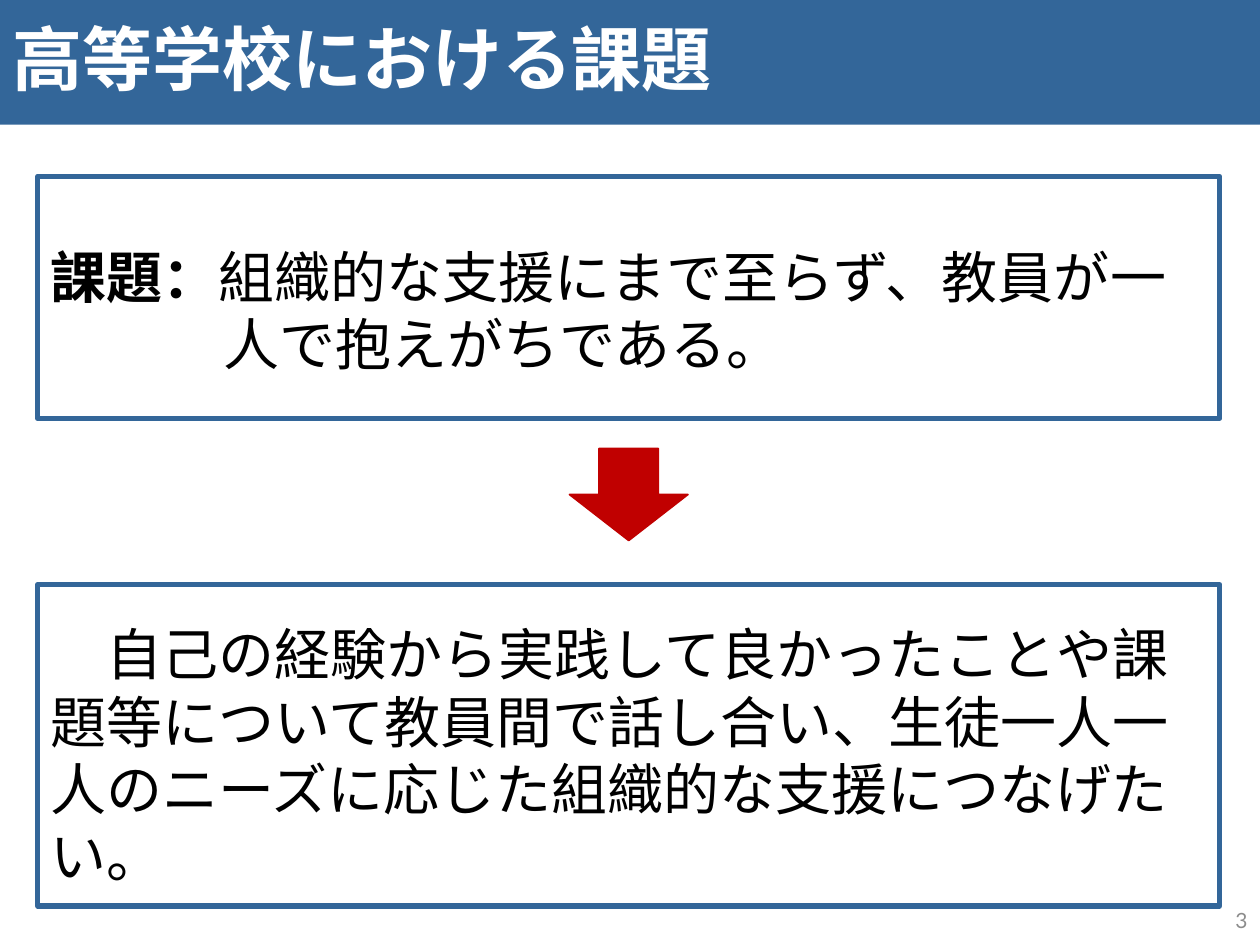
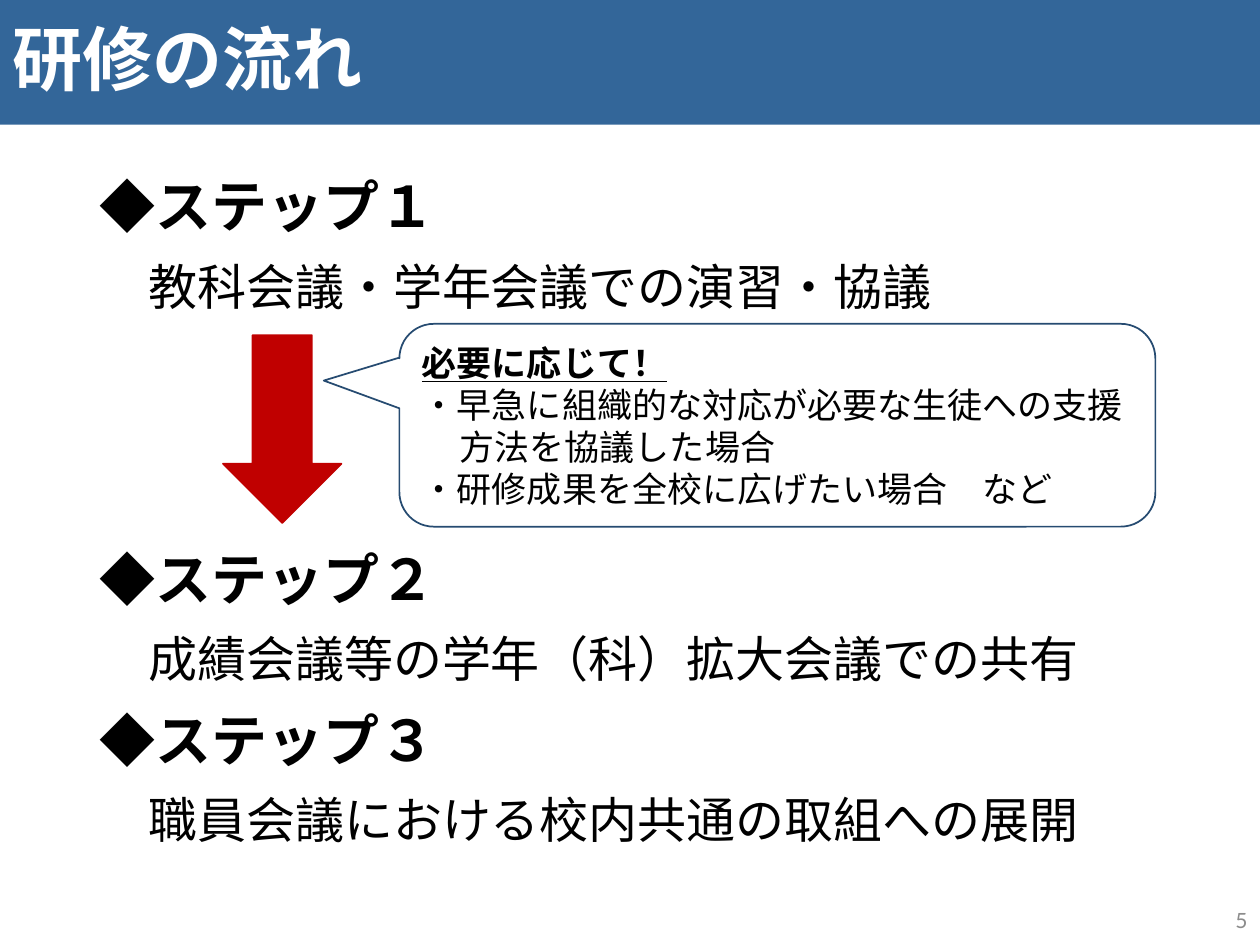
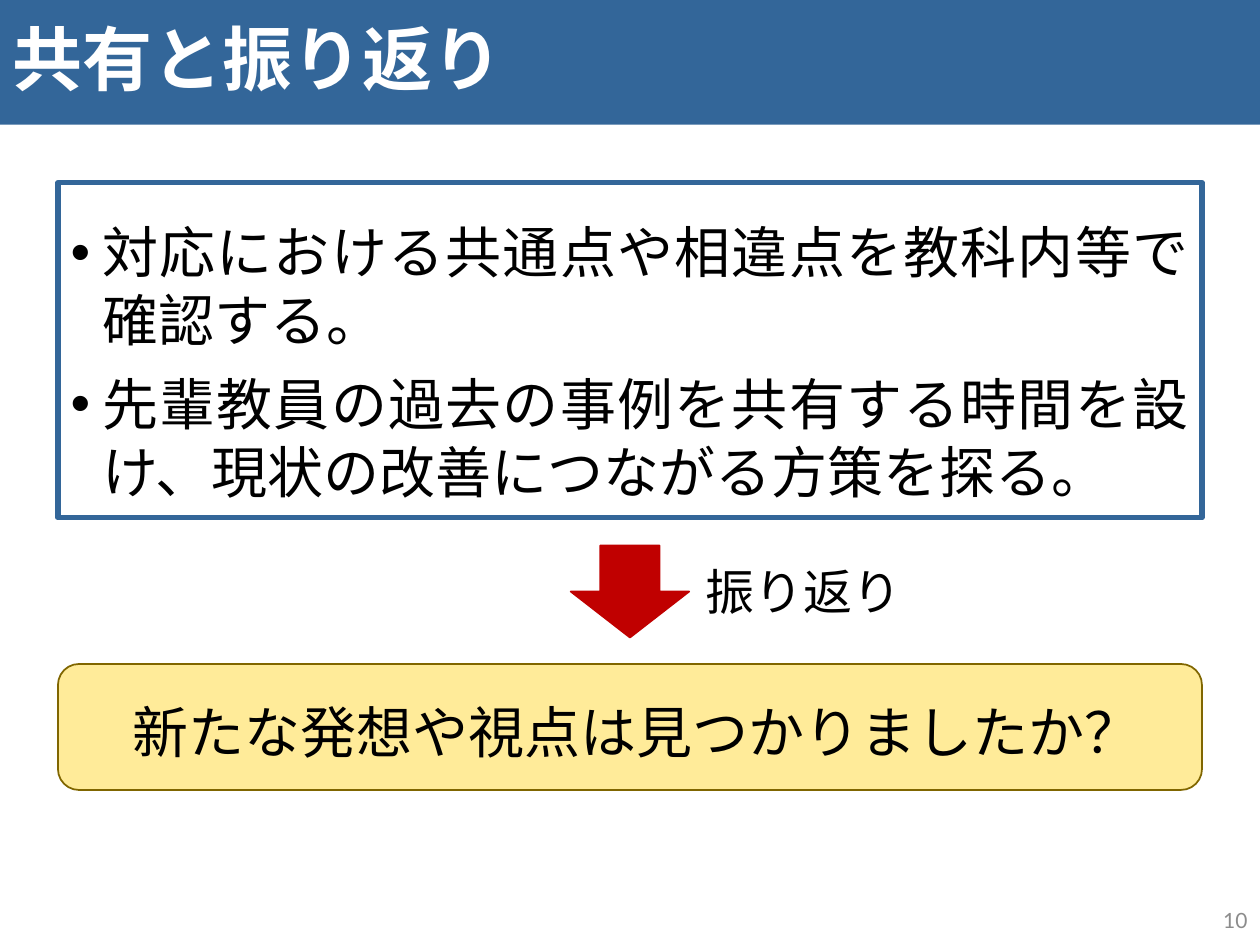
from lxml.etree import SubElement
from pptx import Presentation
from pptx.dml.color import RGBColor
from pptx.enum.shapes import MSO_SHAPE
from pptx.enum.text import MSO_ANCHOR, MSO_AUTO_SIZE, PP_ALIGN
from pptx.oxml.ns import qn
from pptx.util import Inches, Pt

# Shared look
BLUE, NAVY, RED = "336699", "264B71", "C00000"
CREAM, OLIVE = "FFEB99", "806600"
WHITE, BLACK, GREY = "FFFFFF", "000000", "8C8C8C"
LATO, NOTO = "Lato", "Noto Sans CJK JP"
TOP_GAP = 0.28

deck = Presentation()
deck.slide_width, deck.slide_height = Inches(10), Inches(7.5)
# The slide is a grid of 100 columns and 75 rows
COLUMN, ROW = deck.slide_width / 100, deck.slide_height / 75


def dress(shape, left, top, columns, rows, fill=None, line=None, weight=1,
          anchor=MSO_ANCHOR.TOP, inset=0.05):
    """Place a shape on the grid, paint it and prepare its text frame."""
    shape.left, shape.width = round(left * COLUMN), round(columns * COLUMN)
    shape.top, shape.height = round(top * ROW), round(rows * ROW)
    shape.shadow.inherit = False
    if fill:
        shape.fill.solid()
        shape.fill.fore_color.rgb = RGBColor.from_string(fill)
    if line:
        shape.line.color.rgb = RGBColor.from_string(line)
        shape.line.width = Pt(weight)
    frame = shape.text_frame
    frame.word_wrap = True
    frame.auto_size = MSO_AUTO_SIZE.NONE
    frame.vertical_anchor = anchor
    frame.margin_top = Inches(inset)
    return shape


def write(shape, text, size, font=LATO, color=BLACK, bold=False, before=0,
          spacing=1.0, align=PP_ALIGN.LEFT, hanging=0, bullet=None):
    """Add one paragraph and return it."""
    frame = shape.text_frame
    paragraph = frame.add_paragraph() if frame.text else frame.paragraphs[0]
    properties = paragraph._p.get_or_add_pPr()
    properties.set("marL", str(Inches(hanging)))
    properties.set("indent", str(-Inches(hanging)))
    if bullet:
        SubElement(properties, qn("a:buChar")).set("char", bullet)
    else:
        SubElement(properties, qn("a:buNone"))
    paragraph.add_run().text = text
    paragraph.alignment = align
    paragraph.space_before = Pt(before)
    paragraph.line_spacing = spacing
    paragraph.font.size = Pt(size)
    paragraph.font.name = font
    paragraph.font.bold = bold
    paragraph.font.color.rgb = RGBColor.from_string(color)
    return paragraph


# Title band, page number and red arrow of every slide
pages = [
    ("高等学校における課題", "3", (45.2, 35.6, 9.4, 7.3)),
    ("研修の流れ", "5", (17.7, 26.6, 9.4, 14.9)),
    ("共有と振り返り", "10", (45.3, 43.3, 9.4, 7.3)),
]
slides = []
for heading, number, arrow_cells in pages:
    slide = deck.slides.add_slide(deck.slide_layouts[1])
    band = dress(slide.shapes.title, 0, 0, 100, 9.9, BLUE, anchor=MSO_ANCHOR.MIDDLE)
    write(band, heading, 40, color=WHITE, bold=True, spacing=0.9)
    page_number = dress(slide.shapes.add_textbox(0, 0, 0, 0), 77.5, 71, 22.5, 4,
                        anchor=MSO_ANCHOR.MIDDLE)
    write(page_number, number, 12, color=GREY, align=PP_ALIGN.RIGHT)
    dress(slide.shapes.add_shape(MSO_SHAPE.DOWN_ARROW, 0, 0, 0, 0),
          *arrow_cells, RED, RED)
    slides.append(slide)
issue_slide, flow_slide, review_slide = slides

# Slide 1: issue and the aim that follows from it
issue = dress(issue_slide.placeholders[1], 3, 14, 93.8, 19.2, WHITE, BLUE, 3,
              MSO_ANCHOR.MIDDLE, 0.24)
issue_text = write(issue, "課題：", 32, NOTO, before=10, hanging=1.37)
issue_text.runs[0].font.bold = True
issue_text.add_run().text = "組織的な支援にまで至らず、教員が一人で抱えがちである。"

aim = dress(issue_slide.shapes.add_shape(MSO_SHAPE.RECTANGLE, 0, 0, 0, 0),
            3, 46.4, 93.8, 25.5, WHITE, BLUE, 3, inset=TOP_GAP)
write(aim, "　自己の経験から実践して良かったことや課題等について教員間で話し合い、"
           "生徒一人一人のニーズに応じた組織的な支援につなげたい。", 32, NOTO, before=10)

# Slide 2: three steps, with room for the arrow before the second
steps = dress(flow_slide.placeholders[1], 6.9, 13.1, 87.4, 59.1)
for step, meeting, gap in [
    ("◆ステップ１", "　教科会議・学年会議での演習・協議", 10),
    ("◆ステップ２", "　成績会議等の学年（科）拡大会議での共有", 131),
    ("◆ステップ３", "　職員会議における校内共通の取組への展開", 10),
]:
    write(steps, step, 32, bold=True, before=gap)
    write(steps, meeting, 28, before=10)

condition = dress(
    flow_slide.shapes.add_shape(MSO_SHAPE.ROUNDED_RECTANGULAR_CALLOUT, 0, 0, 0, 0),
    31.7, 25.7, 60, 16.1, WHITE, NAVY, anchor=MSO_ANCHOR.MIDDLE)
for index, adjustment in enumerate((-0.6, -0.22, 0.17)):
    condition.adjustments[index] = adjustment
write(condition, "必要に応じて！", 20, bold=True).font.underline = True
for case in ("・早急に組織的な対応が必要な生徒への支援方法を協議した場合",
             "・研修成果を全校に広げたい場合　など"):
    write(condition, case, 20, hanging=0.3)

# Slide 3: sharing points, then the closing question
sharing = dress(review_slide.placeholders[1], 4.6, 14.5, 90.8, 26.6,
                line=BLUE, weight=3, inset=TOP_GAP)
for point in ("対応における共通点や相違点を教科内等で確認する。",
              "先輩教員の過去の事例を共有する時間を設け、現状の改善につながる方策を探る。"):
    write(sharing, point, 32, NOTO, before=10, align=PP_ALIGN.JUSTIFY,
          hanging=0.25, bullet="•")

question = dress(review_slide.shapes.add_shape(MSO_SHAPE.ROUNDED_RECTANGLE, 0, 0, 0, 0),
                 4.6, 52.7, 90.8, 10, CREAM, OLIVE, inset=TOP_GAP)
write(question, "　新たな発想や視点は見つかりましたか？", 32, before=10, spacing=0.9)

reflection = dress(review_slide.shapes.add_textbox(0, 0, 0, 0), 55, 43.6, 25.2, 6.6,
                   anchor=MSO_ANCHOR.MIDDLE)
write(reflection, "振り返り", 28)

deck.save("out.pptx")
